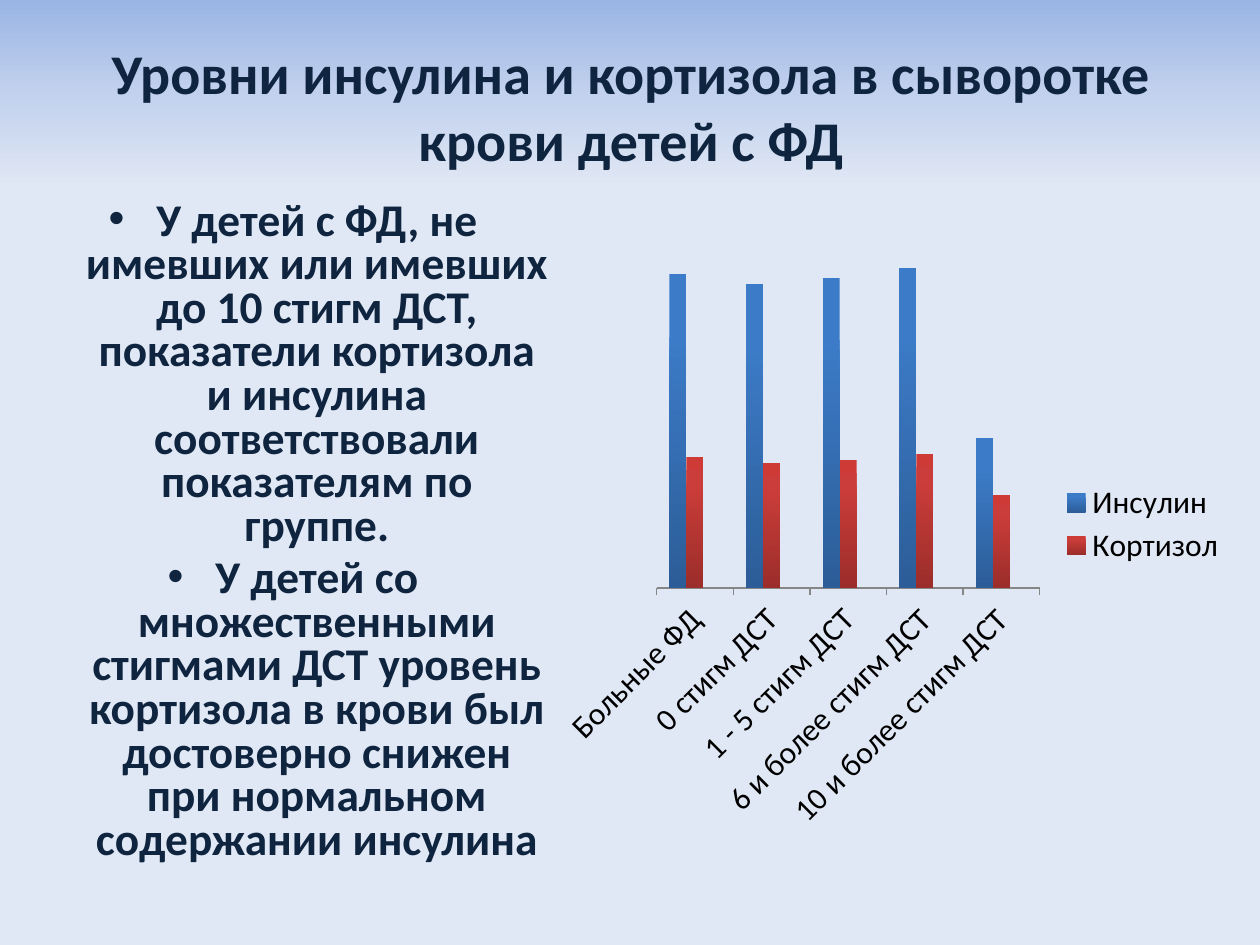
from lxml.etree import SubElement
from pptx import Presentation
from pptx.chart.data import CategoryChartData
from pptx.dml.color import RGBColor
from pptx.enum.chart import XL_CHART_TYPE, XL_LEGEND_POSITION, XL_TICK_LABEL_POSITION, XL_TICK_MARK
from pptx.enum.text import MSO_ANCHOR, PP_ALIGN
from pptx.oxml import parse_xml
from pptx.oxml.ns import nsdecls, qn
from pptx.util import Inches, Pt

TITLE = "Уровни инсулина и кортизола в сыворотке крови детей с ФД"
FINDINGS = [
    "У детей с ФД, не имевших или имевших до 10 стигм ДСТ, показатели кортизола "
    "и инсулина соответствовали показателям по группе.",
    "У детей со множественными стигмами ДСТ уровень кортизола в крови был "
    "достоверно снижен при нормальном содержании инсулина",
]
GROUPS = ["Больные ФД", "0 стигм ДСТ", "1 - 5 стигм ДСТ", "6 и более стигм ДСТ", "10 и более стигм ДСТ"]
LEVELS = {
    "Инсулин": [98, 95, 97, 100, 47],
    "Кортизол": [41, 39, 40, 42, 29],
    "Series 3": [None] * len(GROUPS),
}
EMPTY_SERIES = 2

FONT = "Calibri"
NAVY = RGBColor(0x0F, 0x24, 0x3E)
BLACK = RGBColor(0, 0, 0)
GRAY = RGBColor(0x86, 0x86, 0x86)
SKY = [(0, RGBColor(0x9A, 0xB5, 0xE4)), (10, RGBColor(0xC2, 0xD1, 0xED)), (20, RGBColor(0xE1, 0xE8, 0xF5))]
BLUE = [(0, RGBColor(0x3C, 0x7B, 0xC7)), (20, RGBColor(0x3C, 0x7B, 0xC7)), (100, RGBColor(0x2C, 0x5D, 0x98))]
RED = [(0, RGBColor(0xCE, 0x3B, 0x37)), (20, RGBColor(0xCB, 0x3D, 0x3A)), (100, RGBColor(0x9B, 0x2D, 0x2A))]

TITLE_AREA = (0.51, 0.21, 9, 1.25)
FINDINGS_AREA = (0.2, 1.55, 4.25, 5.67)
CHART_AREA = (4.37, 1.62, 5.43, 5.08)
PLOT_SHARE = (0.155, 0.0, 0.56, 0.6)
LEGEND_SHARE = (0.74, 0.43, 0.25, 0.14)


def paint_downward(fill, owner, stops):
    fill.gradient()
    gradient = owner.find(".//" + qn("a:gradFill"))
    stop_list = gradient.find(qn("a:gsLst"))
    for stop in list(stop_list):
        stop_list.remove(stop)
    for percent, color in stops:
        stop = SubElement(stop_list, qn("a:gs"), pos=str(percent * 1000))
        SubElement(stop, qn("a:srgbClr"), val=str(color))
    gradient.find(qn("a:lin")).set("ang", "5400000")


def add_text(page, area, texts, size):
    box = page.shapes.add_textbox(*map(Inches, area))
    frame = box.text_frame
    frame.word_wrap = True
    frame.text = "\n".join(texts)
    for para in frame.paragraphs:
        para.alignment = PP_ALIGN.CENTER
        for span in para.runs:
            span.font.name = FONT
            span.font.size = Pt(size)
            span.font.bold = True
            span.font.color.rgb = NAVY
    return frame


def make_bullet(para):
    para.line_spacing = 0.8
    para.space_before = Pt(5.2)
    properties = para._p.get_or_add_pPr()
    properties.set("marL", str(Inches(0.38)))
    properties.set("indent", str(-Inches(0.38)))
    SubElement(properties, qn("a:buFont"), typeface="Arial")
    SubElement(properties, qn("a:buChar"), char="•")


def manual_layout(shares, inner=False):
    target = '<c:layoutTarget val="inner"/>' if inner else ""
    modes = "".join(f'<c:{side}Mode val="edge"/>' for side in "xy")
    places = "".join(f'<c:{side} val="{share}"/>' for side, share in zip("xywh", shares))
    return parse_xml(
        f'<c:layout {nsdecls("c")}><c:manualLayout>{target}{modes}{places}</c:manualLayout></c:layout>'
    )


def set_layout(element, layout, position):
    for old in element.findall(qn("c:layout")):
        element.remove(old)
    element.insert(position, layout)


def add_levels_chart(page):
    data = CategoryChartData()
    data.categories = GROUPS
    for name, values in LEVELS.items():
        data.add_series(name, values)
    chart = page.shapes.add_chart(
        XL_CHART_TYPE.COLUMN_CLUSTERED, *map(Inches, CHART_AREA), data
    ).chart
    chart.has_title = False
    chart.font.name = FONT
    chart.font.size = Pt(18)
    chart.font.color.rgb = BLACK

    plot = chart.plots[0]
    plot.gap_width = 150
    plot.overlap = 0
    plot.vary_by_categories = False
    for series, stops in zip(plot.series, (BLUE, RED)):
        paint_downward(series.format.fill, series._element, stops)

    axis = chart.category_axis
    axis.major_tick_mark = XL_TICK_MARK.OUTSIDE
    axis.tick_label_position = XL_TICK_LABEL_POSITION.LOW
    axis.format.line.color.rgb = GRAY
    scale = chart.value_axis
    scale.minimum_scale = 0
    scale.maximum_scale = 120
    scale.has_major_gridlines = False
    scale.visible = False

    chart.has_legend = True
    legend = chart.legend
    legend.position = XL_LEGEND_POSITION.RIGHT
    legend.include_in_layout = False
    entry = parse_xml(
        f'<c:legendEntry {nsdecls("c")}><c:idx val="{EMPTY_SERIES}"/><c:delete val="1"/></c:legendEntry>'
    )
    legend._element.insert(1, entry)
    set_layout(legend._element, manual_layout(LEGEND_SHARE), 2)
    plot_area = chart._chartSpace.find(".//" + qn("c:plotArea"))
    set_layout(plot_area, manual_layout(PLOT_SHARE, inner=True), 0)


def main():
    deck = Presentation()
    deck.slide_width, deck.slide_height = Inches(10), Inches(7.5)
    page = deck.slides.add_slide(deck.slide_layouts[6])
    paint_downward(page.background.fill, page._element, SKY + [(100, SKY[-1][1])])
    add_text(page, TITLE_AREA, [TITLE], 32).vertical_anchor = MSO_ANCHOR.MIDDLE
    for para in add_text(page, FINDINGS_AREA, FINDINGS, 25.9).paragraphs:
        make_bullet(para)
    add_levels_chart(page)
    deck.save("out.pptx")


if __name__ == "__main__":
    main()
